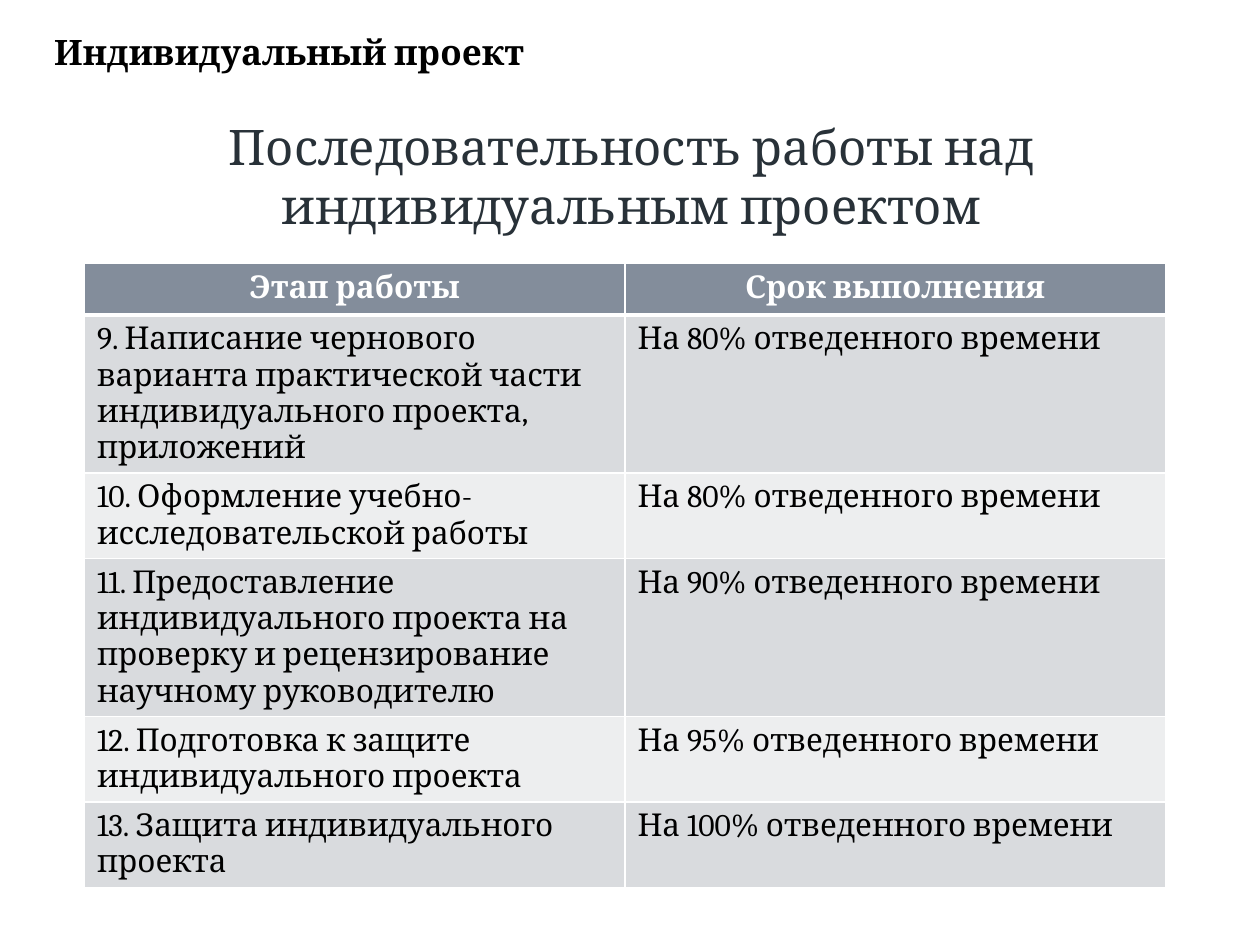
from lxml import etree
from pptx import Presentation
from pptx.dml.color import RGBColor
from pptx.enum.text import MSO_ANCHOR, PP_ALIGN
from pptx.oxml.ns import qn
from pptx.util import Inches, Pt

CENTER, LEFT = PP_ALIGN.CENTER, PP_ALIGN.LEFT
MIDDLE = MSO_ANCHOR.MIDDLE
FONT = "Cambria"
COLORS = {
    "title": "283138",
    "text": "000000",
    "white": "FFFFFF",
    "header": "838D9B",
    "odd": "D9DBDE",
    "even": "EDEEEF",
}
TITLE = "Последовательность работы над индивидуальным проектом"
STAGES = [
    ("Этап работы", "Срок выполнения"),
    ("9. Написание чернового варианта практической части "
     "индивидуального проекта, приложений", "На 80% отведенного времени"),
    ("10. Оформление учебно-исследовательской работы",
     "На 80% отведенного времени"),
    ("11. Предоставление индивидуального проекта на проверку и "
     "рецензирование научному руководителю", "На 90% отведенного времени"),
    ("12. Подготовка к защите индивидуального проекта",
     "На 95% отведенного времени"),
    ("13. Защита индивидуального проекта", "На 100% отведенного времени"),
]


def rgb(name):
    return RGBColor.from_string(COLORS[name])


def format_text(frame, size, color, bold=False, align=CENTER):
    for paragraph in frame.paragraphs:
        paragraph.alignment = align
        for run in paragraph.runs:
            run.font.name = FONT
            run.font.size = Pt(size)
            run.font.bold = bold
            run.font.color.rgb = rgb(color)


def set_borders(cell, bottom_width):
    properties = cell._tc.get_or_add_tcPr()
    for side, width in (("L", 1), ("R", 1), ("T", 1), ("B", bottom_width)):
        line = etree.SubElement(properties, qn(f"a:ln{side}"), w=str(Pt(width)))
        fill = etree.SubElement(line, qn("a:solidFill"))
        etree.SubElement(fill, qn("a:srgbClr"), val=COLORS["white"])


def add_section_label(slide, left, top, width, height):
    label = slide.shapes.add_textbox(left, top, width, height)
    frame = label.text_frame
    frame.word_wrap = True
    frame.vertical_anchor = MIDDLE
    frame.text = "Индивидуальный проект"
    format_text(frame, 20, "text", bold=True)


def place_title(slide, left, top, width, height):
    title = slide.shapes.title
    title.left, title.top, title.width, title.height = left, top, width, height
    title.text_frame.text = TITLE
    title.text_frame.vertical_anchor = MIDDLE
    format_text(title.text_frame, 28, "title")


def add_schedule(slide, left, top, width, row_height):
    table = slide.shapes.add_table(
        len(STAGES), 2, left, top, width, row_height * len(STAGES)).table
    for row_index, stage in enumerate(STAGES):
        is_header = row_index == 0
        band = "header" if is_header else ("even", "odd")[row_index % 2]
        for column_index, text in enumerate(stage):
            cell = table.cell(row_index, column_index)
            set_borders(cell, 3 if is_header else 1)
            cell.fill.solid()
            cell.fill.fore_color.rgb = rgb(band)
            cell.text_frame.text = text
            format_text(cell.text_frame, 18, "white" if is_header else "text",
                        bold=is_header, align=CENTER if is_header else LEFT)


def main():
    deck = Presentation()
    deck.slide_width, deck.slide_height = Inches(10), Inches(7.5)
    slide = deck.slides.add_slide(deck.slide_layouts[5])
    add_schedule(slide, Inches(0.67), Inches(2.09), Inches(8.58), Inches(0.41))
    add_section_label(slide, Inches(0.13), Inches(0.13), Inches(4.33), Inches(0.55))
    place_title(slide, Inches(0.51), Inches(0.71), Inches(9), Inches(1.37))
    deck.save("out.pptx")


if __name__ == "__main__":
    main()
